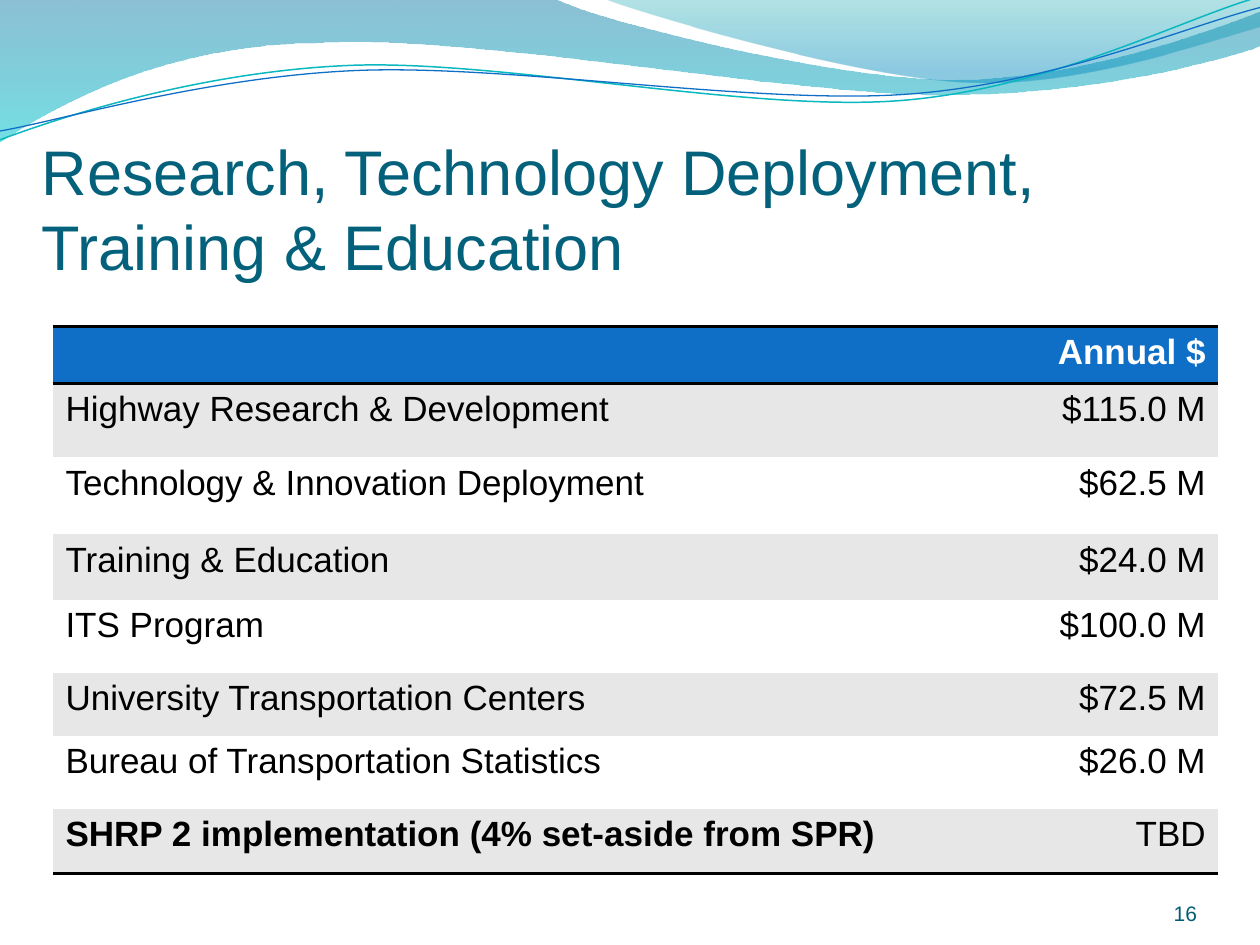
from lxml import etree
from pptx import Presentation
from pptx.dml.color import RGBColor
from pptx.enum import text
from pptx.oxml import ns
from pptx.util import Inches, Pt

HUES = {
    "title": "04617B", "page": "045D75", "blue": "0F6FC6", "teal": "0AB8BF",
    "band": "E7E7E7", "white": "FFFFFF", "black": "000000",
    "sea": "0074A1", "aqua": "00C6CF", "mint": "00A1A9", "sky": "008BBF",
}
LEFT, RIGHT = text.PP_ALIGN.LEFT, text.PP_ALIGN.RIGHT

ROWS = [
    ("", "Annual $", 0.45),
    ("Highway Research & Development", "$115.0 M", 0.59),
    ("Technology & Innovation Deployment", "$62.5 M", 0.61),
    ("Training & Education", "$24.0 M", 0.52),
    ("ITS Program", "$100.0 M", 0.58),
    ("University Transportation Centers", "$72.5 M", 0.5),
    ("Bureau of Transportation Statistics", "$26.0 M", 0.58),
    ("SHRP 2 implementation (4% set-aside from SPR)", "TBD", 0.51),
]
WAVE = [(0, -0.01), (4.4, -0.01),
        (4.76, 0.17, 6.64, 0.63, 7.58, 0.63), (8.53, 0.63, 9.58, 0.26, 10, 0.09),
        (10.01, 0.36),
        (9.83, 0.44, 8.7, 0.76, 7.46, 0.75), (6.22, 0.75, 3.82, 0.28, 2.57, 0.34),
        (1.29, 0.35, 0.46, 0.83, -0.01, 1.13)]
CREST = [(4.79, -0.01),
         (5.09, 0.11, 6.82, 0.62, 7.69, 0.65), (8.56, 0.69, 9.61, 0.32, 10, 0.21),
         (10, 0)]
TEAL = [(0, 1.11),
        (0.48, 0.93, 1.58, 0.57, 2.77, 0.52), (3.95, 0.47, 5.93, 0.89, 7.13, 0.8),
        (8.33, 0.71, 9.38, 0.15, 9.98, -0.02)]
BLUE = [(0, 1.04),
        (0.47, 0.96, 1.64, 0.61, 2.83, 0.56), (4.03, 0.51, 5.97, 0.83, 7.17, 0.75),
        (8.36, 0.67, 9.41, 0.21, 10, 0.06)]


def rgb(hue):
    return RGBColor.from_string(HUES[hue])


def write(frame, words, size=20, hue="black", bold=False, align=LEFT):
    para = frame.paragraphs[0]
    para.alignment = align
    run = para.add_run()
    run.text = words
    font = run.font
    font.name, font.size, font.bold = "Arial", Pt(size), bold
    font.color.rgb = rgb(hue)


def edge(cell, side, hue="black", width=2):
    props = cell._tc.get_or_add_tcPr()
    line = etree.Element(ns.qn(f"a:ln{side}"), w=str(Pt(width)))
    fill = etree.SubElement(line, ns.qn("a:solidFill"))
    etree.SubElement(fill, ns.qn("a:srgbClr"), val=HUES[hue])
    props.insert(0, line)


class Page:
    def __init__(self, deck):
        self.slide = deck.slides.add_slide(deck.slide_layouts[6])
        self.shapes = self.slide.shapes

    def curve(self, steps, close):
        dots = [(Inches(x), Inches(y)) for step in steps
                for x, y in zip(step[::2], step[1::2])]
        pen = self.shapes.build_freeform(*dots[0])
        pen.add_line_segments(dots[1:], close=close)
        shape = pen.convert_to_shape()
        shape.shadow.inherit = False
        legs = iter(list(shape._element.iter(ns.qn("a:lnTo"))))
        for step in steps[1:]:
            leg = next(legs)
            if len(step) == 6:
                leg.tag = ns.qn("a:cubicBezTo")
                for _ in range(2):
                    spare = next(legs)
                    leg.append(spare[0])
                    spare.getparent().remove(spare)
        return shape

    def wash(self, steps, stops):
        shape = self.curve(steps, True)
        shape.line.fill.background()
        shape.fill.gradient()
        shape.fill.gradient_angle = 270
        for stop, (spot, hue, alpha) in zip(shape.fill.gradient_stops, stops):
            stop.position = spot
            stop.color.rgb = rgb(hue)
            tint = stop._gs.find(ns.qn("a:srgbClr"))
            etree.SubElement(tint, ns.qn("a:alpha"), val=str(alpha * 1000))

    def stroke(self, steps, hue, width):
        shape = self.curve(steps, False)
        shape.fill.background()
        shape.line.color.rgb = rgb(hue)
        shape.line.width = Pt(width)

    def label(self, words, x, y, w, h, top=0, **style):
        frame = self.shapes.add_textbox(*map(Inches, (x, y, w, h))).text_frame
        frame.word_wrap = True
        frame.vertical_anchor = text.MSO_ANCHOR.BOTTOM
        frame.margin_left = frame.margin_right = frame.margin_bottom = 0
        frame.margin_top = Inches(top)
        write(frame, words, **style)

    def table(self, rows, x, y, widths):
        high = sum(row[-1] for row in rows)
        box = map(Inches, (x, y, sum(widths), high))
        grid = self.shapes.add_table(len(rows), len(widths), *box).table
        plain = "{2D5ABB26-0587-4C30-8999-92F81FD0307C}"
        grid._tbl.tblPr.find(ns.qn("a:tableStyleId")).text = plain
        for col, width in zip(grid.columns, widths):
            col.width = Inches(width)
        last = len(rows) - 1
        for r, (*words, height) in enumerate(rows):
            grid.rows[r].height = Inches(height)
            for c, word in enumerate(words):
                cell = grid.cell(r, c)
                cell.fill.solid()
                cell.fill.fore_color.rgb = rgb(
                    "blue" if r == 0 else "band" if r % 2 else "white")
                if word:
                    write(cell.text_frame, word,
                          hue="white" if r == 0 else "black",
                          bold=r == 0 or (r == last and c == 0),
                          align=RIGHT if c else LEFT)
                if r in (0, last):
                    edge(cell, "B")
                if r == 0:
                    edge(cell, "T")


def main():
    deck = Presentation()
    deck.slide_width, deck.slide_height = Inches(10), Inches(7.5)
    page = Page(deck)
    page.wash(WAVE, [(0, "sea", 45), (1, "aqua", 55)])
    page.wash(CREST, [(0, "mint", 30), (0.8, "sky", 45)])
    page.stroke(TEAL, "teal", 0.85)
    page.stroke(BLUE, "blue", 0.75)
    page.label("Research, Technology Deployment, Training & Education",
               0.33, 1, 9.5, 1.25, top=0.05, size=36, hue="title")
    page.table(ROWS, 0.42, 2.59, (6.67, 2.58))
    page.label("16", 8.67, 6.95, 0.83, 0.4, size=12, hue="page", align=RIGHT)
    deck.save("out.pptx")


if __name__ == "__main__":
    main()
